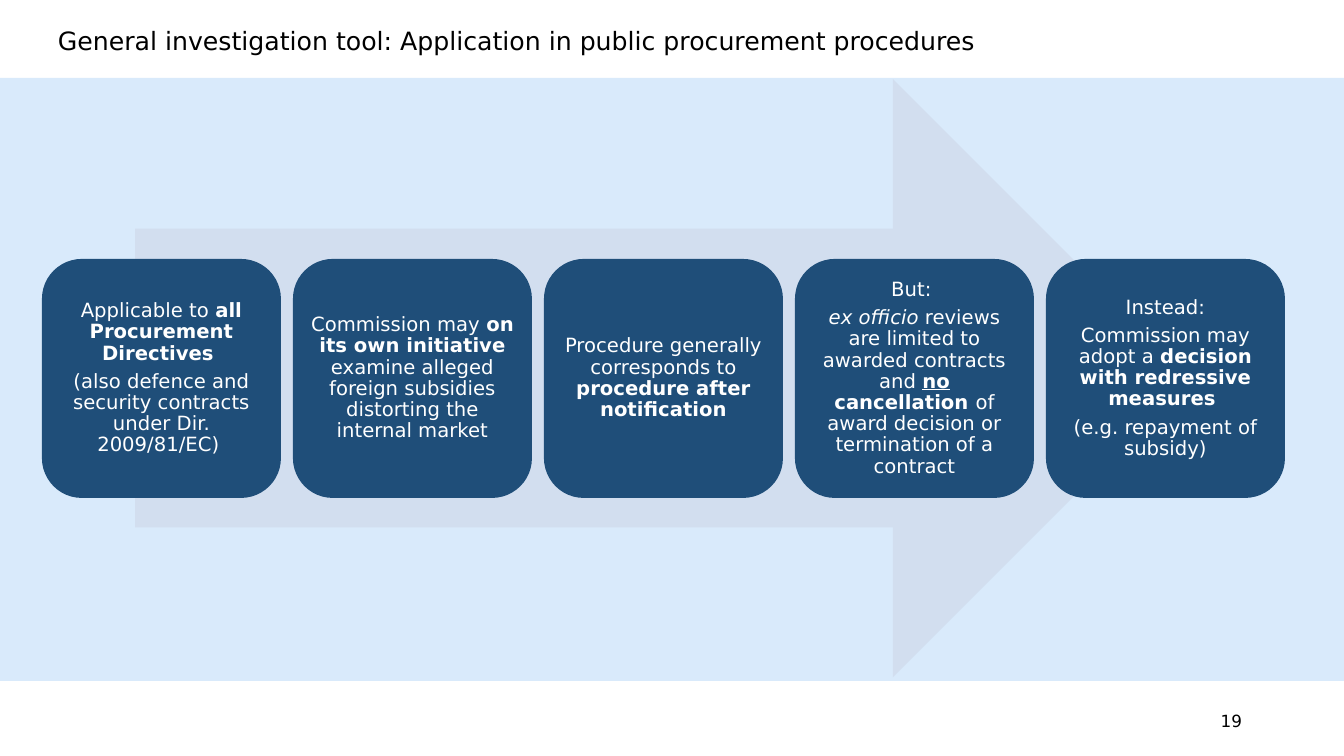
from pptx import Presentation
from pptx.dml.color import RGBColor
from pptx.enum.shapes import MSO_SHAPE as Shape
from pptx.enum.text import MSO_ANCHOR as Anchor, PP_ALIGN as Align
from pptx.util import Pt

EMU_PER_PX = 914400 / 100.8
SLIDE_W, SLIDE_H = 1344, 756
COLOURS = {"band": "D9EAFB", "arrow": "D2DEEF", "step": "1F4E79",
           "light": "FFFFFF", "dark": "000000"}

# Each step is a list of paragraphs; each paragraph is a list of (text, marks),
# where marks may hold b (bold), i (italic) and u (underline).
STEPS = [
    [[("Applicable to ", ""), ("all Procurement Directives ", "b")],
     [("(also defence and security contracts under Dir. 2009/81/EC) ", "")]],
    [[("Commission may ", ""), ("on its own initiative ", "b"),
      ("examine alleged foreign subsidies distorting the internal market", "")]],
    [[("Procedure generally corresponds to ", ""),
      ("procedure after notification", "b")]],
    [[("But: ", "")],
     [("ex officio", "i"), (" reviews are limited to awarded contracts and ", ""),
      ("no", "bu"), (" cancellation ", "b"),
      ("of award decision or termination of a contract", "")]],
    [[("Instead:", "")],
     [("Commission may adopt a ", ""), ("decision with redressive measures ", "b")],
     [("(e.g. repayment of subsidy)", "")]],
]


def px(length):
    return round(length * EMU_PER_PX)


def write(frame, text, *, size, font, colour, align=Align.LEFT, anchor=Anchor.TOP,
          line_spacing=1.0, space_after=0):
    """Fill a text frame from a string or from paragraphs of (text, marks)."""
    frame.word_wrap = True
    frame.vertical_anchor = anchor
    paragraphs = [[(text, "")]] if isinstance(text, str) else text
    for index, runs in enumerate(paragraphs):
        paragraph = frame.add_paragraph() if index else frame.paragraphs[0]
        paragraph.alignment = align
        paragraph.line_spacing = line_spacing
        paragraph.space_after = Pt(space_after)
        for words, marks in runs:
            run = paragraph.add_run()
            run.text = words
            run.font.name = font
            run.font.size = Pt(size)
            run.font.bold = "b" in marks
            run.font.italic = "i" in marks
            run.font.underline = "u" in marks
            run.font.color.rgb = RGBColor.from_string(COLOURS[colour])


class SlideBuilder:
    font = "DejaVu Sans"

    def __init__(self, slide):
        self.slide = slide

    def shape(self, preset, box, fill):
        shape = self.slide.shapes.add_shape(preset, *map(px, box))
        shape.shadow.inherit = False
        shape.fill.solid()
        shape.fill.fore_color.rgb = RGBColor.from_string(COLOURS[fill])
        shape.line.fill.background()
        return shape

    def label(self, text, box, **style):
        frame = self.slide.shapes.add_textbox(*map(px, box)).text_frame
        write(frame, text, font=self.font, colour="dark", **style)

    def step(self, paragraphs, box):
        frame = self.shape(Shape.ROUNDED_RECTANGLE, box, "step").text_frame
        frame.margin_left = frame.margin_right = px(5)
        frame.margin_top = frame.margin_bottom = px(5)
        write(frame, paragraphs, font=self.font, colour="light", size=14,
              align=Align.CENTER, anchor=Anchor.MIDDLE, line_spacing=0.9,
              space_after=5)


def main():
    deck = Presentation()
    deck.slide_width, deck.slide_height = px(SLIDE_W), px(SLIDE_H)
    builder = SlideBuilder(deck.slides.add_slide(deck.slide_layouts[6]))

    # Background band, title and page number
    builder.shape(Shape.RECTANGLE, (0, 78, SLIDE_W, 603), "band")
    builder.label("General investigation tool: Application in public procurement procedures",
                  (48, 24, 1230, 44), size=18, line_spacing=0.9)
    builder.label("19", (950, 701, 302, 40), size=12, align=Align.RIGHT,
                  anchor=Anchor.MIDDLE)

    # Process arrow with the five steps in a row
    builder.shape(Shape.RIGHT_ARROW, (135, 79, 1057, 598), "arrow")
    step_left, step_top, step_side, step_gap = 42, 259, 239, 12
    for index, paragraphs in enumerate(STEPS):
        left = step_left + index * (step_side + step_gap)
        builder.step(paragraphs, (left, step_top, step_side, step_side))

    deck.save("out.pptx")


if __name__ == "__main__":
    main()
